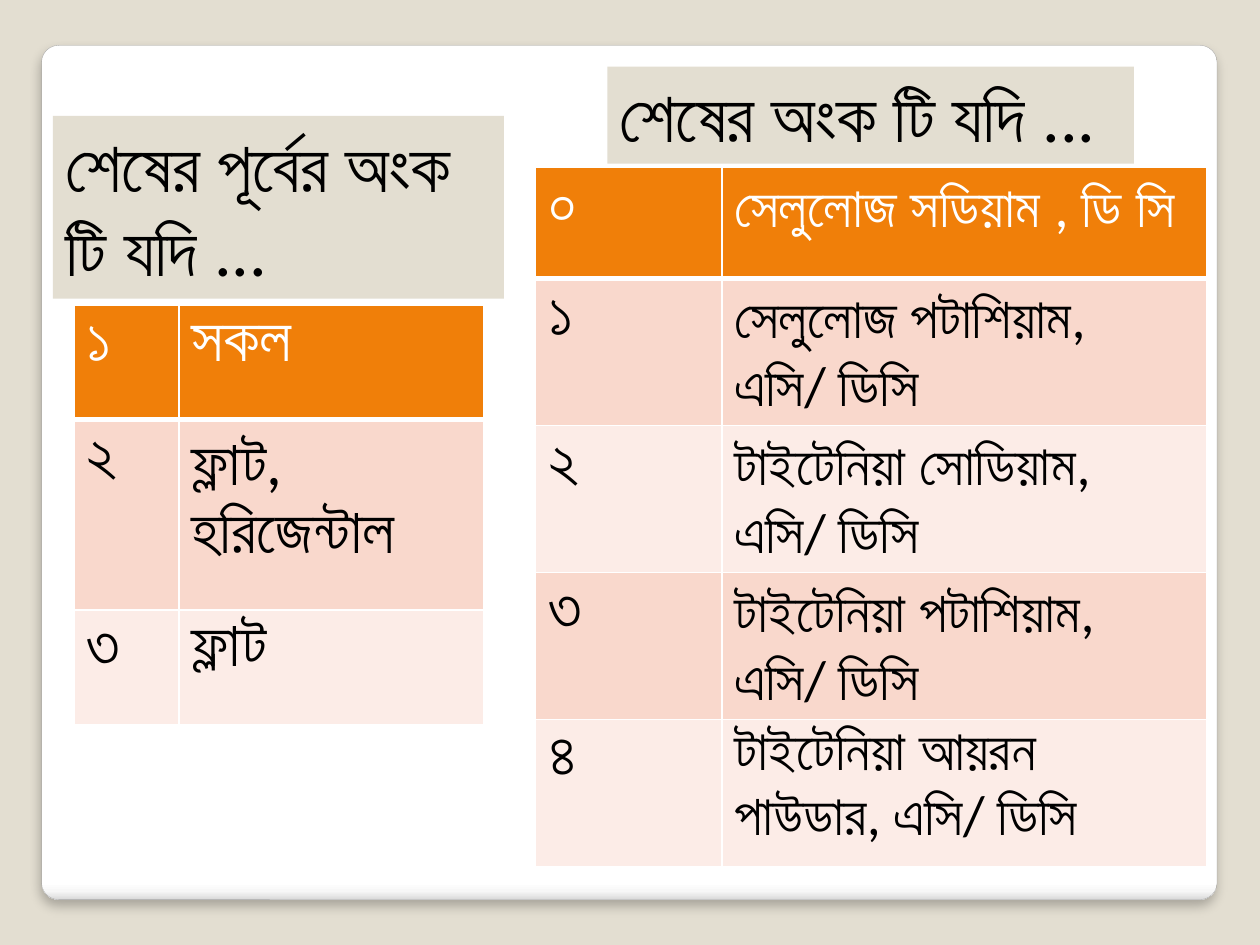
from lxml import etree
from pptx import Presentation
from pptx import util as u
from pptx.dml.color import RGBColor
from pptx.enum import shapes, text
from pptx.oxml import ns

WIDTH, HEIGHT = 10, 7.5
FONT = "Calibri"
COLOURS = {
    "sand": "E3DED1", "white": "FFFFFF", "black": "000000", "outline": "A4A4A4",
    "header": "F07F09", "band_dark": "F9D8CC", "band_light": "FCECE7",
}
PANEL_STOPS = [(0, "FFFFFF"), (98, "FFFFFF"), (99, "F7F7F7"), (100, "DADADA")]

POSITIONS = [
    ["১", "সকল"],
    ["২", "ফ্লাট, হরিজেন্টাল"],
    ["৩", "ফ্লাট"],
]
COATINGS = [
    ["০", "সেলুলোজ সডিয়াম , ডি সি"],
    ["১", "সেলুলোজ পটাশিয়াম,\nএসি/ ডিসি"],
    ["২", "টাইটেনিয়া সোডিয়াম,\nএসি/ ডিসি"],
    ["৩", "টাইটেনিয়া পটাশিয়াম,\nএসি/ ডিসি"],
    ["৪", "টাইটেনিয়া আয়রন পাউডার, এসি/ ডিসি"],
]


def rgb(name):
    return RGBColor.from_string(COLOURS[name])


def paint(fill, name):
    fill.solid()
    fill.fore_color.rgb = rgb(name)


def add_xml(parent, tag, **attributes):
    values = {key: str(value) for key, value in attributes.items()}
    return etree.SubElement(parent, ns.qn(tag), values)


def format_text(frame, size, colour):
    for paragraph in frame.paragraphs:
        for run in paragraph.runs:
            for key, value in {"name": FONT, "size": u.Pt(size)}.items():
                setattr(run.font, key, value)
            run.font.color.rgb = rgb(colour)


def add_panel(slide):
    """Rounded white sheet with a shaded lower edge and a soft shadow."""
    panel = slide.shapes.add_shape(
        shapes.MSO_SHAPE.ROUNDED_RECTANGLE,
        *map(u.Inches, (0.33, 0.36, 9.33, 6.78)))
    panel.adjustments[0] = 0.02
    panel.line.color.rgb = rgb("outline")
    panel.line.width = u.Pt(0.16)

    # Gradient with four stops, running downwards
    panel.fill.gradient()
    panel.fill.gradient_angle = 270
    stops = panel.element.spPr.find(ns.qn("a:gradFill")).find(ns.qn("a:gsLst"))
    for stop in list(stops):
        stops.remove(stop)
    for share, colour in PANEL_STOPS:
        stop = add_xml(stops, "a:gs", pos=share * 1000)
        add_xml(stop, "a:srgbClr", val=colour)

    # Shadow below the sheet
    panel.shadow.inherit = False
    effects = panel.element.spPr.find(ns.qn("a:effectLst"))
    shadow = add_xml(effects, "a:outerShdw", blurRad=u.Pt(6), dist=u.Pt(4),
                     dir=90 * 60000, algn="t", rotWithShape=0)
    shade = add_xml(shadow, "a:srgbClr", val=COLOURS["black"])
    add_xml(shade, "a:alpha", val=25000)


def add_heading(slide, wording, box):
    heading = slide.shapes.add_textbox(*map(u.Inches, box))
    paint(heading.fill, "sand")
    frame = heading.text_frame
    frame.word_wrap = True
    frame.auto_size = text.MSO_AUTO_SIZE.SHAPE_TO_FIT_TEXT
    frame.text = wording
    format_text(frame, 40, "black")


def add_borders(cell, widths):
    properties = cell._tc.get_or_add_tcPr()
    for side, points in widths.items():
        line = add_xml(properties, f"a:ln{side}", w=u.Pt(points))
        fill = add_xml(line, "a:solidFill")
        add_xml(fill, "a:srgbClr", val=COLOURS["white"])


def add_answer_table(slide, rows, corner, columns, heights, sizes):
    """Digit in the first column, its meaning in the second."""
    area = (*corner, sum(columns), sum(heights))
    table = slide.shapes.add_table(len(rows), len(columns),
                                   *map(u.Inches, area)).table
    for column, width in zip(table.columns, columns):
        column.width = u.Inches(width)
    for r, (row, height) in enumerate(zip(rows, heights)):
        table.rows[r].height = u.Inches(height)
        band = "header" if r == 0 else ("band_light", "band_dark")[r % 2]
        for c, wording in enumerate(row):
            cell = table.cell(r, c)
            cell.text = wording
            format_text(cell.text_frame, sizes[c], "black" if r else "white")
            add_borders(cell, {"L": 1, "R": 1, "T": 3 if r == 1 else 1,
                               "B": 1 if r else 3})
            paint(cell.fill, band)


def main():
    deck = Presentation()
    deck.slide_width, deck.slide_height = u.Inches(WIDTH), u.Inches(HEIGHT)
    slide = deck.slides.add_slide(deck.slide_layouts[6])
    paint(slide.background.fill, "sand")
    add_panel(slide)

    # Left: the digit before the last
    add_answer_table(slide, POSITIONS, (0.59, 2.42), (0.83, 2.42),
                     (0.91, 1.51, 0.91), (36, 36))
    add_heading(slide, "শেষের পূর্বের অংক টি যদি ...", (0.42, 0.92, 3.58, 1.45))

    # Right: the last digit
    add_answer_table(slide, COATINGS, (4.25, 1.33), (1.48, 3.85),
                     [0.88] * len(COATINGS), (36, 32))
    add_heading(slide, "শেষের অংক টি যদি ...", (4.82, 0.53, 4.18, 0.77))

    deck.save("out.pptx")


if __name__ == "__main__":
    main()
